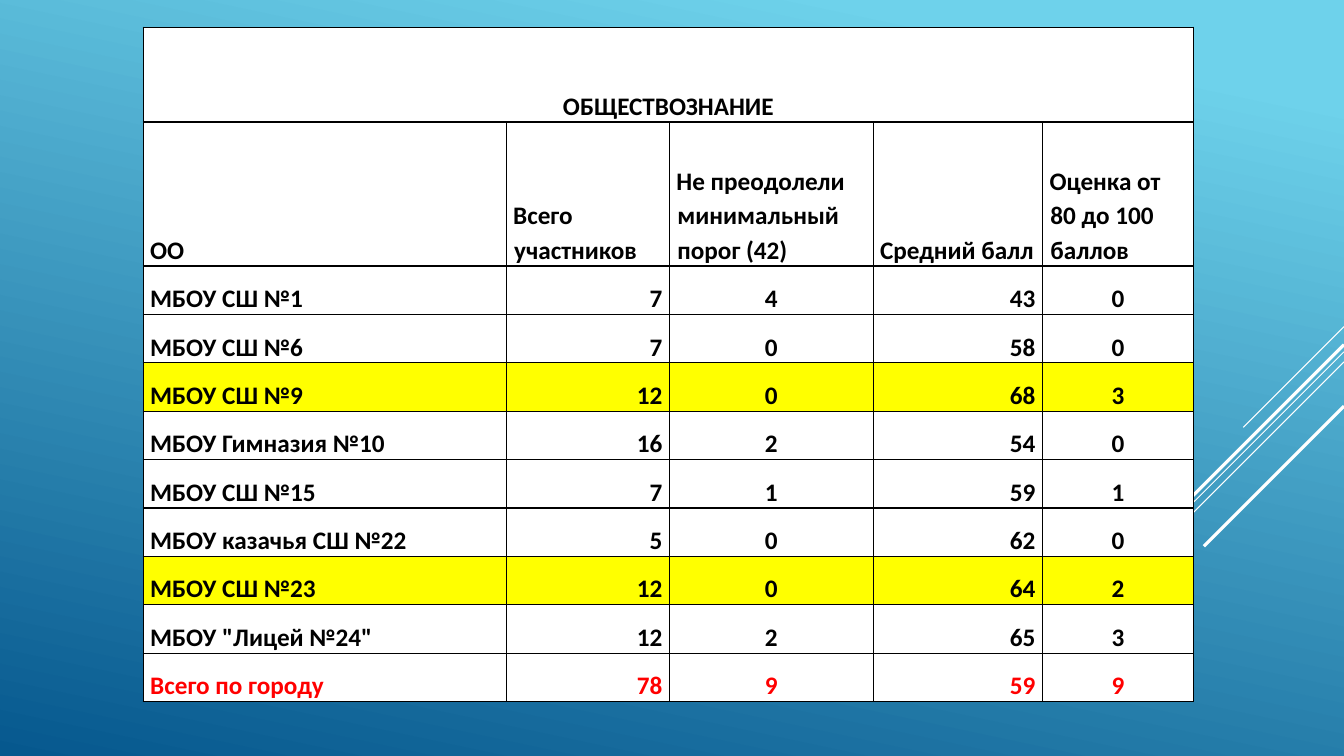
from dataclasses import dataclass

from lxml.etree import SubElement
from pptx import Presentation
from pptx.dml.color import RGBColor
from pptx.enum.shapes import MSO_CONNECTOR
from pptx.enum.text import MSO_ANCHOR, PP_ALIGN
from pptx.oxml.ns import qn
from pptx.util import Inches, Pt


@dataclass(frozen=True)
class Theme:
    font: str = "Calibri"
    text_size: float = 18
    border_width: float = 1
    line_spacing: float = 1.12
    text: str = "000000"
    total: str = "FF0000"
    cell: str = "FFFFFF"
    highlight: str = "FFFF00"
    border: str = "000000"
    stripe: str = "FFFFFF"
    gradient: tuple = ((0.1, "6ED2EB"), (1.0, "06588E"))
    gradient_angle: float = 258


SUBJECT = "ОБЩЕСТВОЗНАНИЕ"
HEADINGS = (
    "ОО",
    "Всего участников",
    "Не преодолели минимальный порог (42)",
    "Средний балл",
    "Оценка от 80 до 100 баллов",
)
RESULTS = (
    ("МБОУ СШ №1", 7, 4, 43, 0),
    ("МБОУ СШ №6", 7, 0, 58, 0),
    ("МБОУ СШ №9", 12, 0, 68, 3),
    ("МБОУ Гимназия №10", 16, 2, 54, 0),
    ("МБОУ СШ №15", 7, 1, 59, 1),
    ("МБОУ казачья СШ №22", 5, 0, 62, 0),
    ("МБОУ СШ №23", 12, 0, 64, 2),
    ('МБОУ "Лицей №24"', 12, 2, 65, 3),
)
TOTAL = ("Всего по городу", 78, 9, 59, 9)
HIGHLIGHTED = {"МБОУ СШ №9", "МБОУ СШ №23"}
COLUMN_WIDTHS = (3.6, 1.62, 2.02, 1.68, 1.5)
ROW_HEIGHTS = (0.94, 1.43) + (0.48,) * (len(RESULTS) + 1)
VALUE_ALIGNMENTS = (
    PP_ALIGN.LEFT,
    PP_ALIGN.RIGHT,
    PP_ALIGN.CENTER,
    PP_ALIGN.RIGHT,
    PP_ALIGN.CENTER,
)
HEADING_ALIGNMENTS = (PP_ALIGN.LEFT,) * len(HEADINGS)
SLIDE_WIDTH = 13.33
STRIPES = (
    (3.24, 1.0, 0.75),
    (3.49, 3.26, 0.75),
    (3.59, 2.07, 0.75),
    (3.42, 1.91, 2.25),
    (4.03, 1.39, 2.25),
)


class SlideBuilder:
    def __init__(self, slide, theme):
        self.slide = slide
        self.theme = theme

    def background(self):
        fill = self.slide.background.fill
        fill.gradient()
        fill.gradient_angle = self.theme.gradient_angle
        for stop, (position, color) in zip(fill.gradient_stops, self.theme.gradient):
            stop.position = position
            stop.color.rgb = RGBColor.from_string(color)

    def stripe(self, top, length, width):
        connector = self.slide.shapes.add_connector(
            MSO_CONNECTOR.STRAIGHT,
            Inches(SLIDE_WIDTH),
            Inches(top),
            Inches(SLIDE_WIDTH - length),
            Inches(top + length),
        )
        connector.line.color.rgb = RGBColor.from_string(self.theme.stripe)
        connector.line.width = Pt(width)
        SubElement(connector._element.spPr, qn("a:effectLst"))

    def table(self, left, top, column_widths, row_heights):
        table = self.slide.shapes.add_table(
            len(row_heights),
            len(column_widths),
            Inches(left),
            Inches(top),
            Inches(sum(column_widths)),
            Inches(sum(row_heights)),
        ).table
        table.first_row = False
        table.horz_banding = False
        for column, width in zip(table.columns, column_widths):
            column.width = Inches(width)
        for row, height in zip(table.rows, row_heights):
            row.height = Inches(height)
        return table

    def row(self, row, values, alignments, fill, color):
        for cell, value, alignment in zip(row.cells, values, alignments):
            self.cell(cell, str(value), alignment, fill, color)

    def cell(self, cell, text, alignment, fill, color):
        cell.vertical_anchor = MSO_ANCHOR.BOTTOM
        cell.margin_left = cell.margin_right = Inches(0.07)
        cell.margin_top = cell.margin_bottom = 0
        self.borders(cell)
        cell.fill.solid()
        cell.fill.fore_color.rgb = RGBColor.from_string(fill)
        cell.text_frame.text = text
        paragraph = cell.text_frame.paragraphs[0]
        paragraph.alignment = alignment
        paragraph.line_spacing = self.theme.line_spacing
        properties = paragraph._p.get_or_add_pPr()
        properties.set("marL", str(Inches(0.01)))
        properties.set("indent", str(Inches(-0.01)))
        for run in paragraph.runs:
            run.font.name = self.theme.font
            run.font.size = Pt(self.theme.text_size)
            run.font.bold = True
            run.font.color.rgb = RGBColor.from_string(color)

    def borders(self, cell):
        properties = cell._tc.get_or_add_tcPr()
        for side in ("a:lnL", "a:lnR", "a:lnT", "a:lnB"):
            line = SubElement(properties, qn(side), w=str(Pt(self.theme.border_width)))
            solid = SubElement(line, qn("a:solidFill"))
            SubElement(solid, qn("a:srgbClr"), val=self.theme.border)


def main():
    presentation = Presentation()
    presentation.slide_width = Inches(SLIDE_WIDTH)
    presentation.slide_height = Inches(7.5)
    theme = Theme()
    slide = presentation.slides.add_slide(presentation.slide_layouts[6])
    builder = SlideBuilder(slide, theme)
    builder.background()
    for top, length, width in STRIPES:
        builder.stripe(top, length, width)

    table = builder.table(1.42, 0.27, COLUMN_WIDTHS, ROW_HEIGHTS)
    subject_row, heading_row, *result_rows, total_row = table.rows
    subject_values = (SUBJECT,) + ("",) * (len(HEADINGS) - 1)
    subject_alignments = (PP_ALIGN.CENTER,) * len(HEADINGS)
    builder.row(subject_row, subject_values, subject_alignments, theme.cell, theme.text)
    table.cell(0, 0).merge(table.cell(0, len(HEADINGS) - 1))
    builder.row(heading_row, HEADINGS, HEADING_ALIGNMENTS, theme.cell, theme.text)
    for row, result in zip(result_rows, RESULTS):
        fill = theme.highlight if result[0] in HIGHLIGHTED else theme.cell
        builder.row(row, result, VALUE_ALIGNMENTS, fill, theme.text)
    builder.row(total_row, TOTAL, VALUE_ALIGNMENTS, theme.cell, theme.total)
    presentation.save("out.pptx")


if __name__ == "__main__":
    main()
